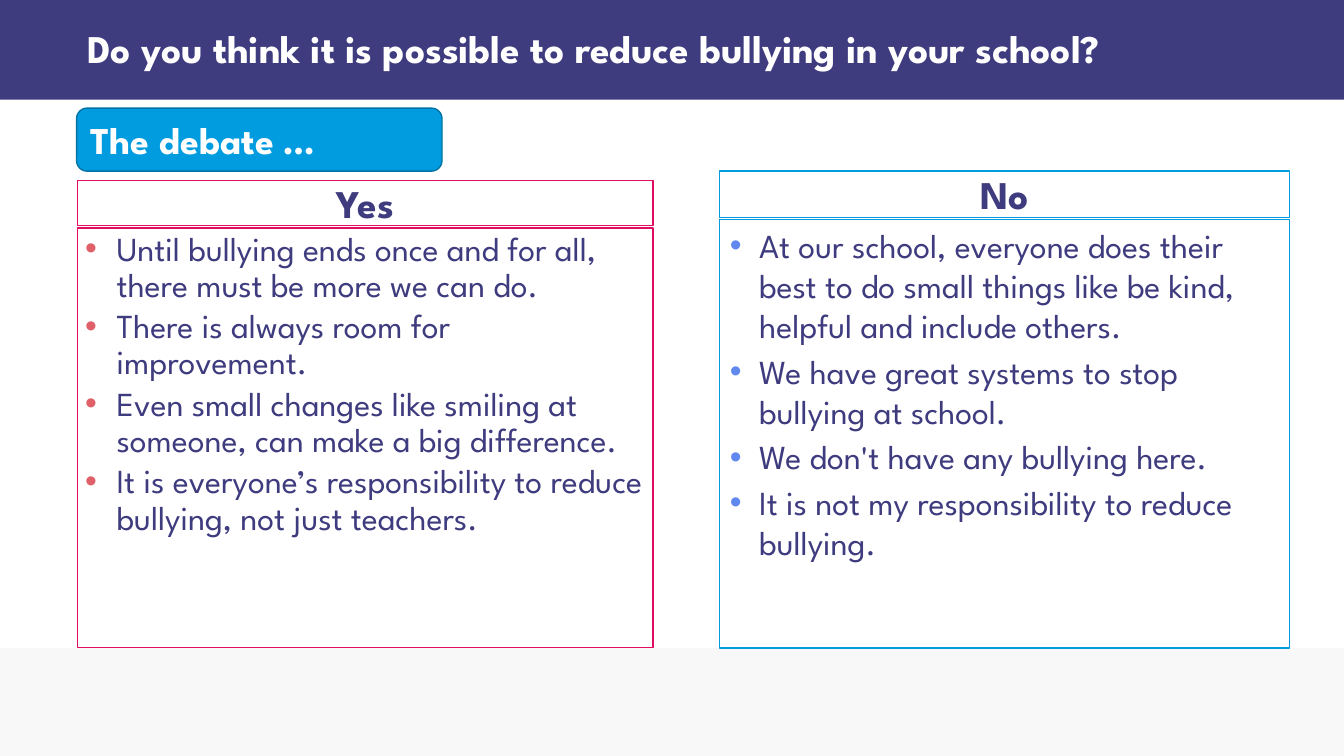
from dataclasses import dataclass

from lxml.etree import SubElement
from pptx import Presentation
from pptx.dml.color import RGBColor
from pptx.enum.shapes import MSO_SHAPE
from pptx.enum.text import MSO_ANCHOR, PP_ALIGN
from pptx.oxml.ns import qn
from pptx.util import Pt

EMU_PER_PX = 9525


@dataclass(frozen=True)
class Theme:
    font: str = "League Spartan"
    ink: str = "3E3B7E"
    white: str = "FFFFFF"
    footer: str = "F2F2F2"
    pink: str = "E10C61"
    pink_bullet: str = "DF6068"
    blue: str = "019CDF"
    blue_edge: str = "0173A5"
    blue_bullet: str = "6088EF"
    heading_size: int = 28
    label_size: int = 27
    body_size: int = 24


THEME = Theme()


def px(length):
    return length * EMU_PER_PX


def color(code):
    return RGBColor.from_string(code)


def add_panel(page, box, fill, line=None, preset=MSO_SHAPE.RECTANGLE):
    panel = page.shapes.add_shape(preset, *map(px, box))
    panel.shadow.inherit = False
    panel.fill.solid()
    panel.fill.fore_color.rgb = color(fill)
    if line:
        panel.line.color.rgb = color(line)
        panel.line.width = Pt(1)
    else:
        panel.line.fill.background()
    return panel


def set_text(shape, lines, size, ink, bold=False, align=PP_ALIGN.LEFT,
             anchor=MSO_ANCHOR.MIDDLE, inset=(10, 5)):
    frame = shape.text_frame
    frame.word_wrap = True
    frame.vertical_anchor = anchor
    frame.margin_left = frame.margin_right = px(inset[0])
    frame.margin_top = frame.margin_bottom = px(inset[1])
    frame.text = "\n".join(lines)
    for para in frame.paragraphs:
        para.alignment = align
        for span in para.runs:
            span.font.name = THEME.font
            span.font.size = Pt(size)
            span.font.bold = bold
            span.font.color.rgb = color(ink)
    return frame.paragraphs


def add_bullet(para, bullet_color, indent):
    properties = para._p.get_or_add_pPr()
    properties.set("marL", str(px(indent)))
    properties.set("indent", str(-px(indent)))
    tint = SubElement(properties, qn("a:buClr"))
    SubElement(tint, qn("a:srgbClr"), val=bullet_color)
    SubElement(properties, qn("a:buFont"), typeface="Arial")
    SubElement(properties, qn("a:buChar"), char="•")


def add_banner(page, box, title):
    left, top, width, height = box
    add_panel(page, box, THEME.ink)
    title_box = page.shapes.add_textbox(
        px(left + 76), px(top + 1), px(width - 103), px(height - 1))
    paras = set_text(title_box, [title], THEME.heading_size, THEME.white,
                     bold=True, inset=(7, 4))
    paras[0].line_spacing = 0.9


def add_footer(page, box):
    footer = add_panel(page, box, THEME.footer)
    tint = footer._element.spPr.find(qn("a:solidFill"))[0]
    SubElement(tint, qn("a:alpha"), val="50000")


def add_label(page, box, text):
    label = add_panel(page, box, THEME.blue, THEME.blue_edge,
                      MSO_SHAPE.ROUNDED_RECTANGLE)
    set_text(label, [text], THEME.label_size, THEME.white, bold=True)


def add_argument(page, box, heading, points, line, bullet_color,
                 header_height, indent, inset, spacing):
    left, top, width, height = box
    header = add_panel(page, (left, top, width, header_height),
                       THEME.white, line)
    set_text(header, [heading], THEME.heading_size, THEME.ink, bold=True,
             align=PP_ALIGN.CENTER)
    offset = header_height + 2
    body = add_panel(page, (left, top + offset, width, height - offset),
                     THEME.white, line)
    paras = set_text(body, points, THEME.body_size, THEME.ink,
                     anchor=MSO_ANCHOR.TOP, inset=inset)
    for index, para in enumerate(paras):
        add_bullet(para, bullet_color, indent)
        para.line_spacing = spacing
        para.space_before = Pt(3.6 if index else 0)


def build_debate(page, box):
    left, top, width, height = box
    floor = top + 617
    add_footer(page, (left, floor, width, top + height - floor))
    add_banner(page, (left, top, width, 95),
               "Do you think it is possible to reduce bullying in your school?")
    add_argument(
        page, (left + 74, top + 172, 548, floor - top - 172), "Yes",
        ["Until bullying ends once and for all, there must be more we can do.",
         "There is always room for improvement.",
         "Even small changes like smiling at someone, can make a big difference.",
         "It is everyone’s responsibility to reduce bullying, not just teachers."],
        THEME.pink, THEME.pink_bullet,
        header_height=43, indent=30, inset=(7, 4), spacing=0.9)
    add_argument(
        page, (left + 685, top + 163, 543, floor - top - 163), "No",
        ["At our school, everyone does their best to do small things like be "
         "kind, helpful and include others.",
         "We have great systems to stop bullying at school.",
         "We don't have any bullying here.",
         "It is not my responsibility to reduce bullying."],
        THEME.blue, THEME.blue_bullet,
        header_height=44, indent=28, inset=(10, 5), spacing=1.0)
    add_label(page, (left + 73, top + 103, 348, 60), "The debate …")


def main():
    deck = Presentation()
    deck.slide_width, deck.slide_height = px(1280), px(720)
    page = deck.slides.add_slide(deck.slide_layouts[6])
    build_debate(page, (0, 0, 1280, 720))
    deck.save("out.pptx")


if __name__ == "__main__":
    main()
